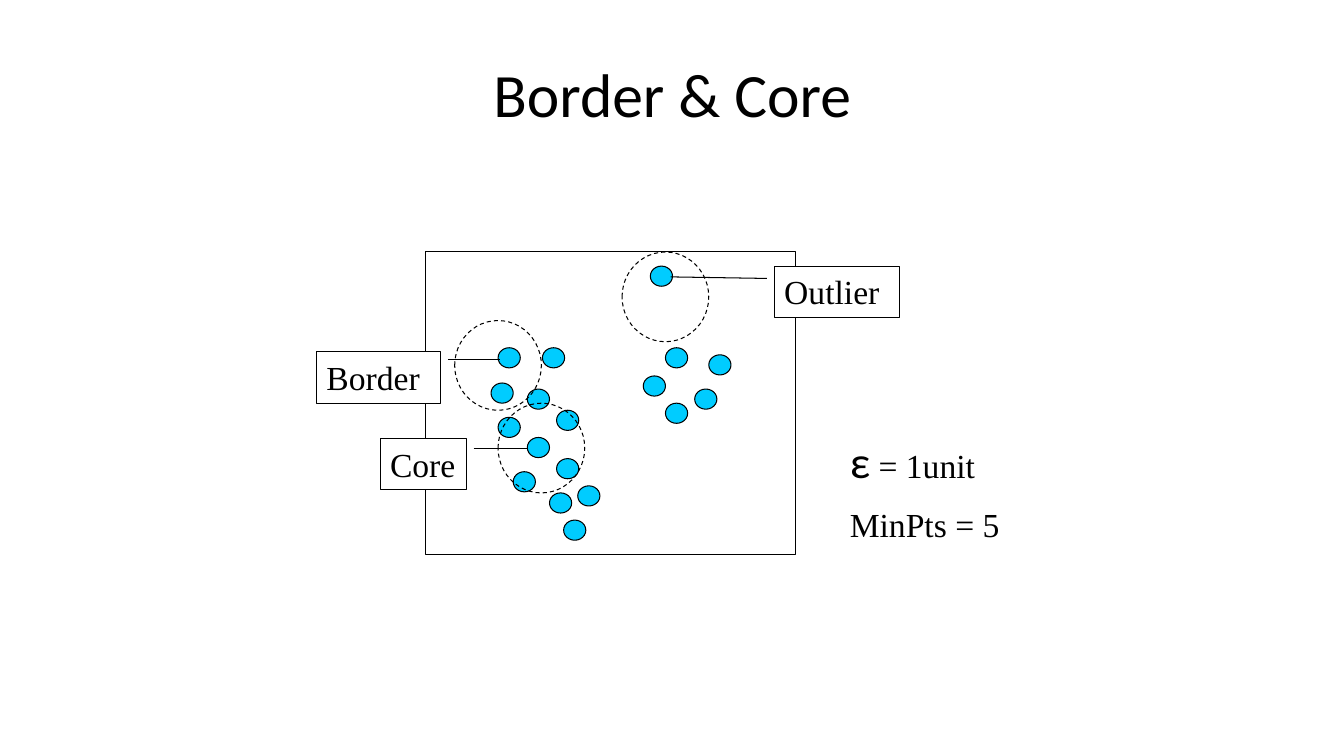
from dataclasses import dataclass

from pptx import Presentation
from pptx.dml.color import RGBColor
from pptx.enum.dml import MSO_LINE_DASH_STYLE as Dash
from pptx.enum.shapes import MSO_SHAPE as Preset
from pptx.enum.text import MSO_ANCHOR as Anchor, MSO_AUTO_SIZE as AutoSize, PP_ALIGN as Align
from pptx.shapes.autoshape import Shape
from pptx.slide import Slide
from pptx.text.text import TextFrame, _Paragraph as Paragraph
from pptx.util import Pt

EMU_PER_PX = 9144
BLACK, WHITE, CYAN = "000000", "FFFFFF", "00CCFF"
SANS, SERIF = "Calibri", "Times New Roman"
DOT_SIZE = (22, 20)
REACH_SIZE = (86, 89)
PLOT = (422, 250, 367, 300)
DOTS = [
    (494, 345), (487, 380), (523, 386), (538, 345), (552, 407), (494, 414),
    (523, 434), (509, 468), (545, 489), (559, 516), (552, 455), (573, 482),
    (645, 264), (660, 345), (638, 373), (689, 386), (703, 352), (660, 400),
]
REACHES = [(451, 318), (494, 400), (617, 250)]


@dataclass(frozen=True)
class Callout:
    """A framed label with a leader given as y, x, y, x fractions of its frame."""
    label: str
    frame: tuple[int, int, int, int]
    leader: tuple[float, float, float, float]


@dataclass(frozen=True)
class Span:
    """A piece of text in one font."""
    text: str
    size: int = 24
    font: str = SERIF


CALLOUTS = [
    Callout("Core", (377, 435, 86, 51), (0.19, 1.08, 0.19, 1.69)),
    Callout("Border", (314, 349, 123, 51), (0.15, 1.06, 0.15, 1.48)),
    Callout("Outlier", (768, 264, 124, 51), (0.24, -0.06, 0.21, -0.83)),
]
PARAMETERS = [[Span("ε", 32, SANS), Span(" = 1unit")], [Span("MinPts = 5")]]


def px(length: int) -> int:
    """Turn px into EMU."""
    return length * EMU_PER_PX


def color(code: str) -> RGBColor:
    """Turn a hex string into a colour."""
    return RGBColor.from_string(code)


def apply_format(target: object, values: dict[str, object]) -> None:
    """Set each named attribute on the target."""
    for name, value in values.items():
        setattr(target, name, value)


def add_outline(page: Slide, preset: Preset, frame: tuple[int, int, int, int],
                fill: str | None = None, dashed: bool = False) -> Shape:
    """Draw a preset shape with a thin black line."""
    shape = page.shapes.add_shape(preset, *map(px, frame))
    shape.shadow.inherit = False
    if fill:
        shape.fill.solid()
        shape.fill.fore_color.rgb = color(fill)
    else:
        shape.fill.background()
    shape.line.color.rgb = color(BLACK)
    shape.line.width = Pt(0.75)
    if dashed:
        shape.line.dash_style = Dash.DASH
    return shape


def write_para(para: Paragraph, spans: list[Span], align: Align = Align.LEFT) -> None:
    """Fill a paragraph with black spans."""
    para.alignment = align
    for span in spans:
        run = para.add_run()
        run.text = span.text
        apply_format(run.font, {"size": Pt(span.size), "name": span.font})
        run.font.color.rgb = color(BLACK)


def add_text_box(page: Slide, frame: tuple[int, int, int, int], anchor: Anchor) -> TextFrame:
    """Add a wrapping text box."""
    text_frame = page.shapes.add_textbox(*map(px, frame)).text_frame
    apply_format(text_frame, {"word_wrap": True, "vertical_anchor": anchor})
    return text_frame


def add_callout(page: Slide, callout: Callout) -> None:
    """Draw a label box with its leader line."""
    box = add_outline(page, Preset.LINE_CALLOUT_1, callout.frame, WHITE)
    for index, value in enumerate(callout.leader):
        box.adjustments[index] = value
    apply_format(box.text_frame, {
        "word_wrap": True,
        "vertical_anchor": Anchor.TOP,
        "auto_size": AutoSize.SHAPE_TO_FIT_TEXT,
    })
    write_para(box.text_frame.paragraphs[0], [Span(callout.label)])


def add_parameters(page: Slide) -> None:
    """Write the clustering parameters, one a line."""
    text_frame = add_text_box(page, (833, 425, 180, 125), Anchor.TOP)
    text_frame.auto_size = AutoSize.SHAPE_TO_FIT_TEXT
    for index, spans in enumerate(PARAMETERS):
        para = text_frame.add_paragraph() if index else text_frame.paragraphs[0]
        para.space_before = Pt(12 if index else 0)
        write_para(para, spans)


def main() -> None:
    """Build and save the slide."""
    deck = Presentation()
    apply_format(deck, {"slide_width": px(1333), "slide_height": px(750)})
    page = deck.slides.add_slide(deck.slide_layouts[6])
    title = add_text_box(page, (67, 30, 1200, 125), Anchor.MIDDLE)
    write_para(title.paragraphs[0], [Span("Border & Core", 44, SANS)], Align.CENTER)
    for corner in DOTS:
        add_outline(page, Preset.OVAL, corner + DOT_SIZE, CYAN)
    add_outline(page, Preset.RECTANGLE, PLOT)
    for corner in REACHES:
        add_outline(page, Preset.OVAL, corner + REACH_SIZE, dashed=True)
    for callout in CALLOUTS:
        add_callout(page, callout)
    add_parameters(page)
    deck.save("out.pptx")


if __name__ == "__main__":
    main()
